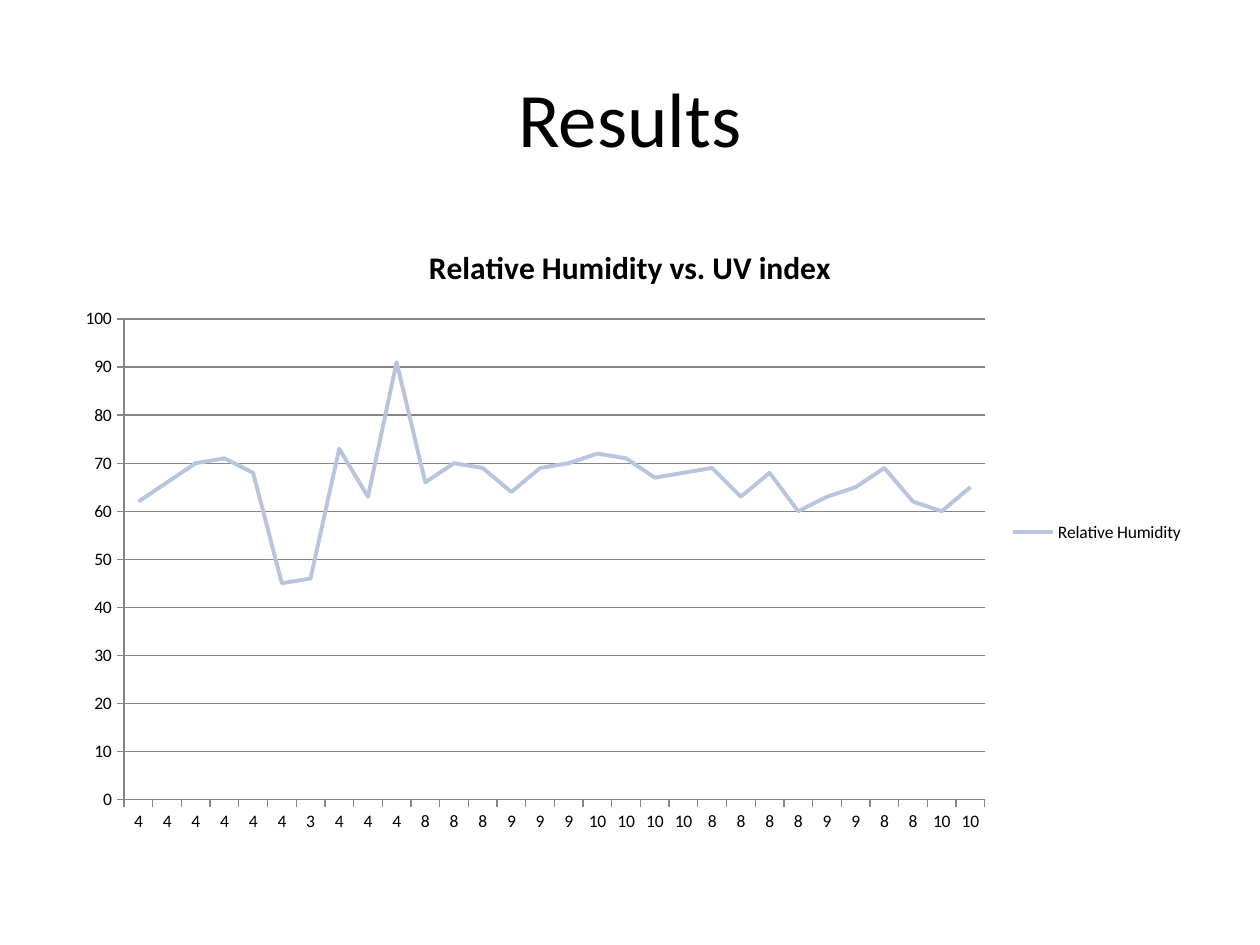
from dataclasses import dataclass

from pptx import Presentation
from pptx.chart.data import CategoryChartData as ChartData
from pptx.dml.color import RGBColor as Color
from pptx.enum.chart import XL_CHART_TYPE as ChartType
from pptx.enum.chart import XL_LEGEND_POSITION as LegendPosition
from pptx.enum.chart import XL_TICK_MARK as TickMark
from pptx.enum.text import MSO_ANCHOR as Anchor
from pptx.enum.text import PP_ALIGN as Align
from pptx.util import Inches, Pt


@dataclass(frozen=True)
class Theme:
    font: str = "Calibri"
    text: Color = Color(0x00, 0x00, 0x00)
    grid: Color = Color(0x86, 0x86, 0x86)
    humidity: Color = Color(0xB9, 0xC5, 0xDE)
    heading_size: float = 44
    chart_title_size: float = 18
    label_size: float = 10
    grid_width: float = 0.75
    series_width: float = 2.25


THEME = Theme()

UV_INDEX = [
    4, 4, 4, 4, 4, 4, 3, 4, 4, 4, 8, 8, 8, 9, 9,
    9, 10, 10, 10, 10, 8, 8, 8, 8, 9, 9, 8, 8, 10, 10,
]
HUMIDITY = [
    62, 66, 70, 71, 68, 45, 46, 73, 63, 91, 66, 70, 69, 64, 69,
    70, 72, 71, 67, 68, 69, 63, 68, 60, 63, 65, 69, 62, 60, 65,
]


def style_font(font, size, bold=False):
    font.name = THEME.font
    font.size = Pt(size)
    font.bold = bold
    font.color.rgb = THEME.text


def style_line(line, color, width):
    line.color.rgb = color
    line.width = Pt(width)


def write_text(frame, text, *, size, bold=False, align=Align.CENTER):
    para = frame.paragraphs[0]
    para.alignment = align
    span = para.add_run()
    span.text = text
    style_font(span.font, size, bold)


def add_heading(page, text):
    box = page.shapes.add_textbox(Inches(0.5), Inches(0.3), Inches(9), Inches(1.25))
    frame = box.text_frame
    frame.word_wrap = True
    frame.vertical_anchor = Anchor.MIDDLE
    write_text(frame, text, size=THEME.heading_size)


def style_axis(axis):
    axis.major_tick_mark = TickMark.OUTSIDE
    axis.minor_tick_mark = TickMark.NONE
    style_line(axis.format.line, THEME.grid, THEME.grid_width)


def add_line_chart(page, title, name, categories, values):
    data = ChartData(number_format="General")
    data.categories = [str(category) for category in categories]
    data.add_series(name, values)
    chart = page.shapes.add_chart(
        ChartType.LINE, Inches(0.5), Inches(1.75), Inches(9), Inches(4.95), data
    ).chart
    style_font(chart.font, THEME.label_size)

    chart.has_title = True
    write_text(chart.chart_title.text_frame, title, size=THEME.chart_title_size, bold=True)
    chart.chart_title.include_in_layout = False
    chart.has_legend = True
    chart.legend.position = LegendPosition.RIGHT
    chart.legend.include_in_layout = False

    style_axis(chart.category_axis)
    value_axis = chart.value_axis
    style_axis(value_axis)
    value_axis.minimum_scale = 0
    value_axis.maximum_scale = 100
    value_axis.major_unit = 10
    value_axis.has_major_gridlines = True
    style_line(value_axis.major_gridlines.format.line, THEME.grid, THEME.grid_width)

    plot = chart.plots[0]
    plot.vary_by_categories = False
    series = plot.series[0]
    series.smooth = False
    style_line(series.format.line, THEME.humidity, THEME.series_width)


def main():
    deck = Presentation()
    deck.slide_width = Inches(10)
    deck.slide_height = Inches(7.5)
    page = deck.slides.add_slide(deck.slide_layouts[6])
    add_heading(page, "Results")
    add_line_chart(
        page, "Relative Humidity vs. UV index", "Relative Humidity", UV_INDEX, HUMIDITY
    )
    deck.save("out.pptx")


if __name__ == "__main__":
    main()
